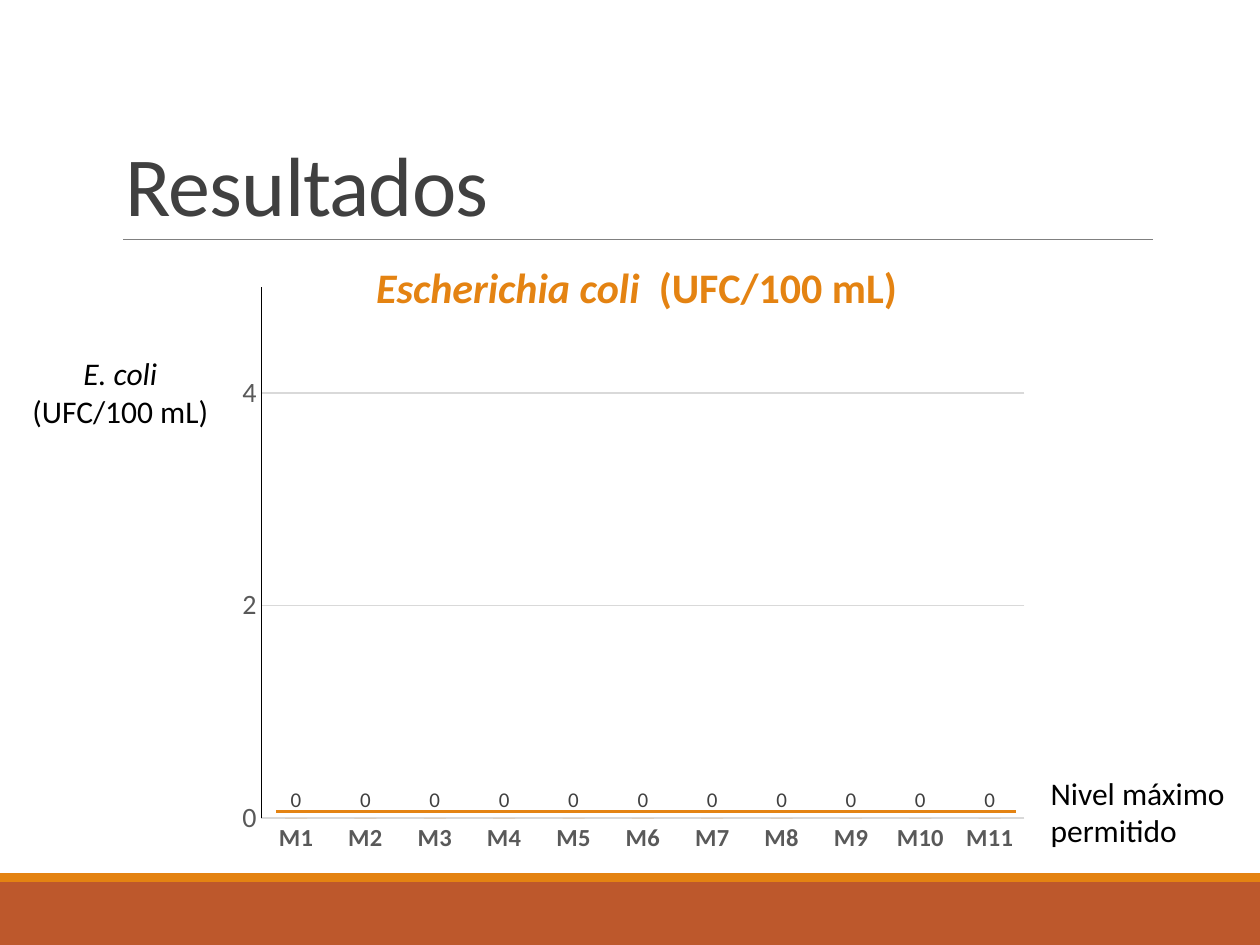
from typing import NamedTuple

from lxml import etree
from pptx import Presentation
from pptx.chart.data import CategoryChartData
from pptx.dml.color import RGBColor
from pptx.enum.chart import XL_CHART_TYPE, XL_LABEL_POSITION, XL_TICK_MARK
from pptx.enum.shapes import MSO_CONNECTOR, MSO_SHAPE
from pptx.enum.text import MSO_ANCHOR, PP_ALIGN
from pptx.oxml import parse_xml
from pptx.oxml.ns import nsdecls, qn
from pptx.util import Inches, Pt

FONT = "Calibri"
ORANGE, RUST = "E48312", "BD582C"
DARK, GRAY, PALE = "404040", "595959", "D9D9D9"


class Run(NamedTuple):
    text: str
    italic: bool = False


class Band(NamedTuple):
    top: float
    height: float
    color: str


class Rule(NamedTuple):
    left: float
    right: float
    y: float
    color: str
    weight: float


FOOTER_BANDS = [Band(7, 0.5, RUST), Band(6.93, 0.07, ORANGE)]
TITLE_RULE = Rule(0.98, 9.15, 1.9, "808080", 0.5)
LIMIT_RULE = Rule(2.19, 8.06, 6.44, ORANGE, 1.75)


def rgb(color: str) -> RGBColor:
    return RGBColor.from_string(color)


def style_font(font, size: float, color: str, bold: bool = False, italic: bool = False) -> None:
    font.name = FONT
    font.size = Pt(size)
    font.color.rgb = rgb(color)
    font.bold = bold
    font.italic = italic


def style_line(line, color: str, weight: float = 0.75) -> None:
    line.color.rgb = rgb(color)
    line.width = Pt(weight)


def add_text(slide, runs: list[Run], left: float, top: float, width: float, height: float, *,
             size: float = 18, color: str = "000000", align=PP_ALIGN.LEFT,
             anchor=MSO_ANCHOR.TOP, line_spacing: float = 1.0, tracking: float = 0) -> None:
    """Add a one-paragraph text box; tracking is letter spacing in points."""
    frame = slide.shapes.add_textbox(
        Inches(left), Inches(top), Inches(width), Inches(height)).text_frame
    frame.word_wrap = True
    frame.vertical_anchor = anchor
    paragraph = frame.paragraphs[0]
    paragraph.alignment = align
    paragraph.line_spacing = line_spacing
    for part in runs:
        run = paragraph.add_run()
        run.text = part.text
        style_font(run.font, size, color, italic=part.italic)
        if tracking:
            run.font._element.set("spc", str(round(tracking * 100)))


def add_band(slide, band: Band) -> None:
    shape = slide.shapes.add_shape(
        MSO_SHAPE.RECTANGLE, 0, Inches(band.top), Inches(10), Inches(band.height))
    shape.shadow.inherit = False
    shape.fill.solid()
    shape.fill.fore_color.rgb = rgb(band.color)
    shape.line.fill.background()


def add_rule(slide, rule: Rule) -> None:
    connector = slide.shapes.add_connector(
        MSO_CONNECTOR.STRAIGHT, Inches(rule.left), Inches(rule.y),
        Inches(rule.right), Inches(rule.y))
    style_line(connector.line, rule.color, rule.weight)
    etree.SubElement(connector._element.spPr, qn("a:effectLst"))


def manual_layout(**settings):
    """Build a c:layout element from its child names and values."""
    children = "".join(f'<c:{name} val="{value}"/>' for name, value in settings.items())
    return parse_xml(
        f'<c:layout {nsdecls("c")}><c:manualLayout>{children}</c:manualLayout></c:layout>')


def set_layout(parent, layout, index: int) -> None:
    for old in parent.findall(qn("c:layout")):
        parent.remove(old)
    parent.insert(index, layout)


def add_coli_chart(slide) -> None:
    samples = [f"M{number}" for number in range(1, 12)]
    data = CategoryChartData()
    data.categories = samples
    data.add_series("Series 1", [0] * len(samples))
    chart = slide.shapes.add_chart(
        XL_CHART_TYPE.COLUMN_CLUSTERED, Inches(1.79), Inches(1.51),
        Inches(6.47), Inches(5.37), data).chart
    style_font(chart.font, 10, "000000")
    chart.has_legend = False

    chart.has_title = True
    heading = chart.chart_title.text_frame.paragraphs[0]
    for part in (Run("Escherichia coli", italic=True), Run("  (UFC/100 mL)")):
        run = heading.add_run()
        run.text = part.text
        style_font(run.font, 24, ORANGE, bold=True, italic=part.italic)
    chart.chart_title.include_in_layout = False
    set_layout(chart.chart_title._element,
               manual_layout(xMode="edge", yMode="edge", x=0.18, y=0.1), 1)

    plot = chart.plots[0]
    plot.gap_width = 215
    plot.overlap = -32
    plot.vary_by_categories = False
    set_layout(chart._chartSpace.chart.plotArea,
               manual_layout(layoutTarget="inner", xMode="edge", yMode="edge",
                             x=0.044, y=0.143, w=0.936, h=0.785), 0)
    fill = plot.series[0].format.fill
    fill.solid()
    fill.fore_color.rgb = rgb(ORANGE)
    plot.has_data_labels = True
    labels = plot.data_labels
    labels.show_value = True
    labels.position = XL_LABEL_POSITION.OUTSIDE_END
    style_font(labels.font, 12, DARK)

    category, value = chart.category_axis, chart.value_axis
    for axis, size, bold, line_color in ((category, 14, True, PALE), (value, 16, False, "000000")):
        axis.major_tick_mark = axis.minor_tick_mark = XL_TICK_MARK.NONE
        style_font(axis.tick_labels.font, size, GRAY, bold=bold)
        style_line(axis.format.line, line_color)
    value.minimum_scale, value.maximum_scale, value.major_unit = 0, 5, 2
    value.has_major_gridlines = True
    style_line(value.major_gridlines.format.line, PALE)


def main() -> None:
    deck = Presentation()
    deck.slide_width, deck.slide_height = Inches(10), Inches(7.5)
    slide = deck.slides.add_slide(deck.slide_layouts[6])
    for band in FOOTER_BANDS:
        add_band(slide, band)
    add_rule(slide, TITLE_RULE)
    add_text(slide, [Run("Resultados")], 0.9, 0.31, 8.25, 1.59, size=48, color=DARK,
             anchor=MSO_ANCHOR.BOTTOM, line_spacing=0.85, tracking=-0.5)
    add_text(slide, [Run("Nivel máximo permitido")], 8.24, 6.09, 1.76, 0.71)
    add_text(slide, [Run("E. coli ", italic=True), Run("(UFC/100 mL)")],
             0.12, 2.76, 1.67, 0.71, align=PP_ALIGN.CENTER)
    add_coli_chart(slide)
    add_rule(slide, LIMIT_RULE)
    deck.save("out.pptx")


if __name__ == "__main__":
    main()
